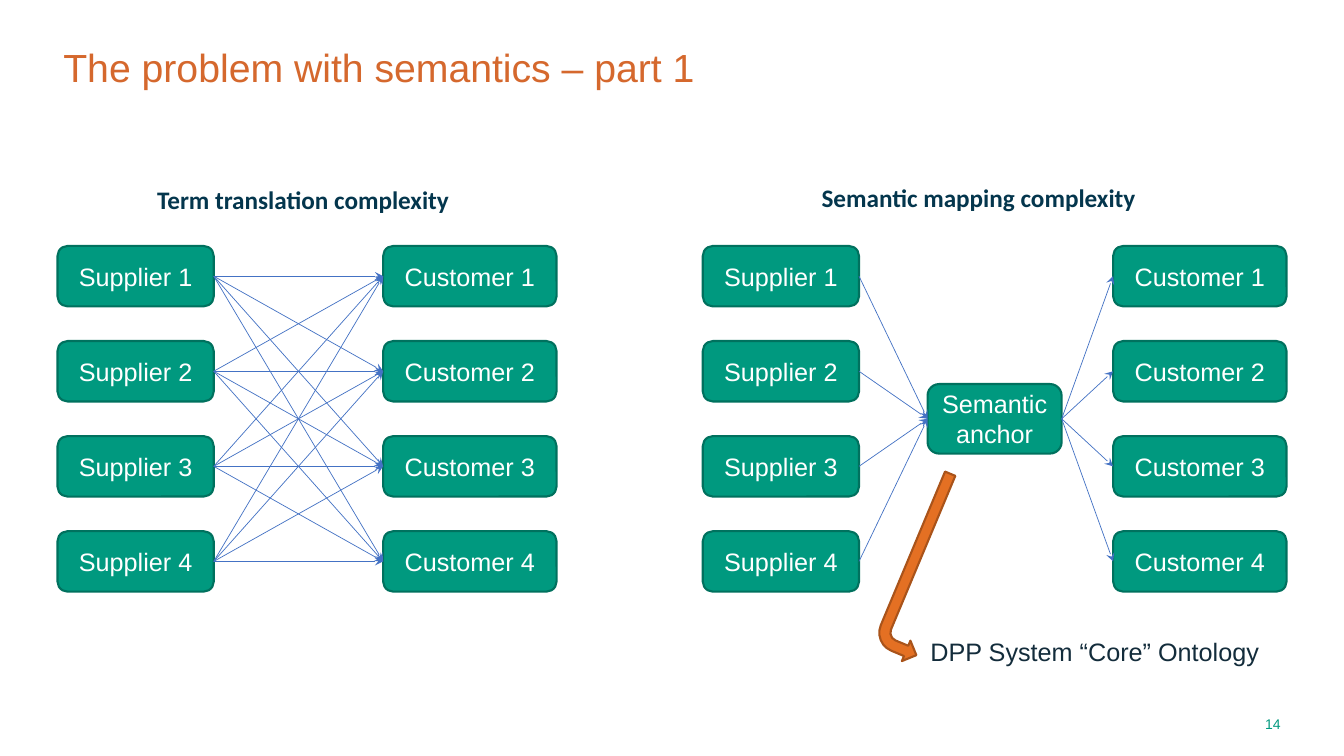
"""Build the slide comparing term translation with semantic mapping."""
from itertools import product

from lxml.etree import SubElement
from pptx import Presentation
from pptx.dml.color import RGBColor
from pptx.enum.shapes import MSO_CONNECTOR, MSO_SHAPE
from pptx.enum.text import MSO_ANCHOR, PP_ALIGN
from pptx.oxml.ns import qn
from pptx.util import Inches, Pt

ORANGE = RGBColor(0xD5, 0x68, 0x2D)
GREEN = RGBColor(0x00, 0x99, 0x7F)
DARK_GREEN = RGBColor(0x00, 0x71, 0x5E)
BLUE = RGBColor(0x44, 0x72, 0xC4)
NAVY = RGBColor(0x04, 0x36, 0x4D)
INK = RGBColor(0x13, 0x2C, 0x3B)
ARROW_FILL = RGBColor(0xE4, 0x70, 0x23)
ARROW_LINE = RGBColor(0xA9, 0x53, 0x1A)
WHITE = RGBColor(0xFF, 0xFF, 0xFF)

TITLE = "The problem with semantics – part 1"
HEADINGS = [
    ("Term translation complexity", (1.46, 1.78, 4.26, 0.4)),
    ("Semantic mapping complexity", (8.05, 1.76, 3.45, 0.4)),
]
ONTOLOGY = "DPP System “Core” Ontology"
PAGE = "14"
ANCHOR = ("Semantic anchor", (9.2, 3.81, 1.33, 0.69))

ROWS = 4
FIRST_TOP, LAST_TOP, BOX_H = 2.44, 5.27, 0.6
WIDTHS = {"Supplier": 1.55, "Customer": 1.72}
PANELS = [
    {"Supplier": 0.57, "Customer": 3.8},
    {"Supplier": 6.97, "Customer": 11.04},
]


def add_text(slide, text, box, size, color, font="Arial", bold=False,
             align=PP_ALIGN.LEFT, anchor=MSO_ANCHOR.TOP, wrap=True):
    tf = slide.shapes.add_textbox(*map(Inches, box)).text_frame
    tf.word_wrap = wrap
    tf.vertical_anchor = anchor
    p = tf.paragraphs[0]
    p.text = text
    p.alignment = align
    style_font(p.font, size, color, font, bold)
    return p


def style_font(f, size, color, name="Arial", bold=False):
    f.size, f.name, f.bold = Pt(size), name, bold
    f.color.rgb = color


def add_preset(slide, preset, box, fill, line):
    s = slide.shapes.add_shape(preset, *map(Inches, box))
    s.shadow.inherit = False
    s.fill.solid()
    s.fill.fore_color.rgb = fill
    s.line.color.rgb = line
    s.line.width = Pt(1.5)
    return s


def add_node(slide, text, box):
    s = add_preset(slide, MSO_SHAPE.ROUNDED_RECTANGLE, box, GREEN, DARK_GREEN)
    tf = s.text_frame
    tf.word_wrap = True
    tf.vertical_anchor = MSO_ANCHOR.MIDDLE
    p = tf.paragraphs[0]
    p.text = text
    p.alignment = PP_ALIGN.CENTER
    style_font(p.font, 18, WHITE)


def add_arrow(slide, start, end):
    c = slide.shapes.add_connector(MSO_CONNECTOR.STRAIGHT, *map(Inches, start + end))
    c.line.color.rgb = BLUE
    c.line.width = Pt(0.5)
    SubElement(c.line._get_or_add_ln(), qn("a:tailEnd"), type="stealth")
    SubElement(c.element.spPr, qn("a:effectLst"))


def side_points(box):
    left, top, width, height = box
    middle = top + height / 2
    return (left, middle), (left + width, middle)


def add_panel(slide, lefts):
    pitch = (LAST_TOP - FIRST_TOP) / (ROWS - 1)
    boxes = {}
    for role, left in lefts.items():
        boxes[role] = [(left, FIRST_TOP + i * pitch, WIDTHS[role], BOX_H)
                       for i in range(ROWS)]
        for number, box in enumerate(boxes[role], 1):
            add_node(slide, f"{role} {number}", box)
    exits = [side_points(box)[1] for box in boxes["Supplier"]]
    entries = [side_points(box)[0] for box in boxes["Customer"]]
    return exits, entries


def main():
    prs = Presentation()
    prs.slide_width, prs.slide_height = Inches(13.33), Inches(7.5)
    slide = prs.slides.add_slide(prs.slide_layouts[6])

    add_text(slide, PAGE, (12.3, 7.06, 0.5, 0.25), 10, GREEN,
             align=PP_ALIGN.RIGHT, anchor=MSO_ANCHOR.MIDDLE)
    title = add_text(slide, TITLE, (0.53, 0.43, 9.95, 0.92), 28, ORANGE)
    title.line_spacing = 0.9
    for text, box in HEADINGS:
        add_text(slide, text, box, 18, NAVY, "Calibri", True)

    direct, anchored = PANELS
    exits, entries = add_panel(slide, direct)
    for start, end in product(exits, entries):
        add_arrow(slide, start, end)

    exits, entries = add_panel(slide, anchored)
    add_node(slide, *ANCHOR)
    anchor_in, anchor_out = side_points(ANCHOR[1])
    for start in exits:
        add_arrow(slide, start, anchor_in)
    for end in entries:
        add_arrow(slide, anchor_out, end)

    add_text(slide, ONTOLOGY, (9.13, 6.26, 3.5, 0.4), 18, INK, wrap=False)
    bent = add_preset(slide, MSO_SHAPE.BENT_ARROW, (8.99, 4.69, 0.44, 1.9),
                      ARROW_FILL, ARROW_LINE)
    bent.rotation = 22.7
    bent.element.spPr.get_or_add_xfrm().set("flipV", "1")

    prs.save("out.pptx")


if __name__ == "__main__":
    main()
